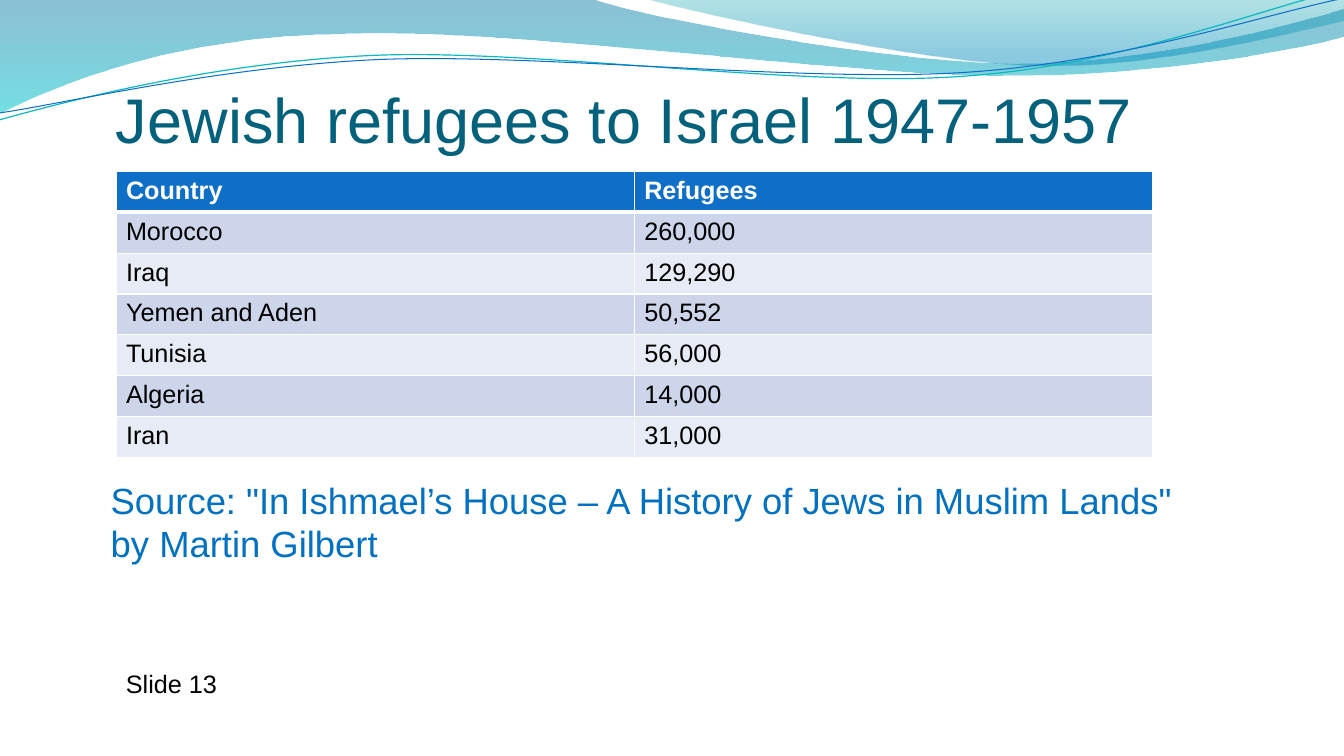
"""Build the slide on refugees to Israel, with its waves, title, table and source."""
import pptx
import pptx.util
import pptx.dml.color
import pptx.enum.text
import pptx.oxml
import pptx.oxml.ns

WIDE, HIGH = 13.33, 7.5
LEFT = 1.15
FONT = "Arial"
WHITE, BLACK, BLUE = "FFFFFF", "000000", "0F6FC6"
BANDS = ["CCD5EA", "E7EBF5"]

TITLE = "Jewish refugees to Israel 1947-1957"
ROWS = [
    ("Country", "Refugees"),
    ("Morocco", "260,000"),
    ("Iraq", "129,290"),
    ("Yemen and Aden", "50,552"),
    ("Tunisia", "56,000"),
    ("Algeria", "14,000"),
    ("Iran", "31,000"),
]
NOTES = [
    ("Source: \"In Ishmael’s House – A History of Jews in Muslim Lands\" by Martin Gilbert",
     (1, 4.69, 10.87, 0.98), 26, "0070C0"),
    ("Slide 13", (LEFT, 6.58, 1.18, 0.4), 18, BLACK),
]
TITLE_BOX = (LEFT, 0.8, 12, 0.75)
TABLE_BOX = (LEFT, 1.7, 10.28, 2.84)

# Each path: a start, then line ends (2 numbers) or curves (6 numbers), in grid cells.
WAVES = [
    ([(0, 0), (5.87, -0.01), (6.34, 0.17, 8.85, 0.63, 10.11, 0.63),
      (11.38, 0.63, 12.78, 0.26, 13.33, 0.09), (13.35, 0.36),
      (13.11, 0.44, 11.6, 0.76, 9.94, 0.75), (8.29, 0.75, 5.09, 0.28, 3.43, 0.34),
      (1.72, 0.36, 0.61, 0.83, -0.01, 1.13), (0, 0)],
     [(0, "0074A1", 45), (1, "00C6CF", 55)]),
    ([(6.39, -0.01), (6.79, 0.11, 9.09, 0.62, 10.25, 0.65),
      (11.41, 0.69, 12.82, 0.32, 13.33, 0.21), (13.33, 0), (6.39, -0.01)],
     [(0, "00A1A9", 30), (0.8, "008BBF", 45)]),
]
LINES = [
    ([(-0.01, 1.19), (0.64, 1.01, 2.11, 0.62, 3.69, 0.55),
      (5.27, 0.48, 7.9, 0.87, 9.5, 0.76), (11.1, 0.66, 12.52, 0.08, 13.31, -0.1)],
     "0AB8BF", 0.85),
    ([(0, 1.12), (0.63, 1.03, 2.18, 0.66, 3.78, 0.59),
      (5.37, 0.53, 7.96, 0.82, 9.55, 0.72), (11.15, 0.62, 12.55, 0.14, 13.34, -0.02)],
     BLUE, 0.75),
]


def cells(*nums):
    """Turn grid cells into lengths; the grid has one cell to the inch."""
    return [pptx.util.Inches(n) for n in nums]


def paint(part, tint):
    """Give a colour from a hex string."""
    part.rgb = pptx.dml.color.RGBColor.from_string(tint)


def apply(thing, **look):
    """Set attributes from format values."""
    for name, val in look.items():
        setattr(thing, name, val)


def write(frame, text, size, tint, bold=False):
    """Put one styled run into a text frame."""
    para = frame.paragraphs[0]
    para.alignment = pptx.enum.text.PP_ALIGN.LEFT
    run = para.add_run()
    run.text = text
    apply(run.font, name=FONT, size=pptx.util.Pt(size), bold=bold)
    paint(run.font.color, tint)


def draw(shapes, path, close):
    """Add a freeform, then bend its lines into cubic curves."""
    spots = [cells(*part[i:i + 2]) for part in path for i in range(0, len(part), 2)]
    pen = shapes.build_freeform(*spots[0], scale=1.0)
    pen.add_line_segments(spots[1:], close=close)
    shape = pen.convert_to_shape()
    shape.shadow.inherit = False
    legs = iter(list(shape.element.iter(pptx.oxml.ns.qn("a:lnTo"))))
    for part in path[1:]:
        leg = next(legs)
        if len(part) == 6:
            bend = pptx.oxml.parse_xml(f'<a:cubicBezTo {pptx.oxml.ns.nsdecls("a")}/>')
            leg.addprevious(bend)
            for piece in (leg, next(legs), next(legs)):
                bend.append(piece[0])
                piece.getparent().remove(piece)
    return shape


def add_waves(slide):
    """Draw the shaded waves and the thin lines over them."""
    for path, stops in WAVES:
        wave = draw(slide.shapes, path, True)
        wave.line.fill.background()
        wave.fill.gradient()
        wave.fill.gradient_angle = 270
        tags = wave.element.iter(pptx.oxml.ns.qn("a:gs"))
        for stop, tag, (place, tint, share) in zip(wave.fill.gradient_stops, tags, stops):
            stop.position = place
            paint(stop.color, tint)
            tag[0].append(pptx.oxml.parse_xml(
                f'<a:alpha {pptx.oxml.ns.nsdecls("a")} val="{share * 1000}"/>'))
    group = slide.shapes.add_group_shape()
    for path, tint, width in LINES:
        line = draw(group.shapes, path, False)
        line.fill.background()
        paint(line.line.color, tint)
        line.line.width = pptx.util.Pt(width)


def edge(cell, row):
    """Rule a cell in white, thicker below the header."""
    thick = {"L": 1, "R": 1, "T": 3 if row == 1 else 1, "B": 3 if row == 0 else 1}
    props = cell._tc.get_or_add_tcPr()
    for spot, (side, width) in enumerate(thick.items()):
        props.insert(spot, pptx.oxml.parse_xml(
            f'<a:ln{side} {pptx.oxml.ns.nsdecls("a")} w="{width * 12700}"><a:solidFill>'
            f'<a:srgbClr val="{WHITE}"/></a:solidFill></a:ln{side}>'))


def add_grid(slide):
    """Add the table of countries."""
    shape = slide.shapes.add_table(len(ROWS), len(ROWS[0]), *cells(*TABLE_BOX))
    for row, texts in enumerate(ROWS):
        head = row == 0
        for col, text in enumerate(texts):
            cell = shape.table.cell(row, col)
            cell.fill.solid()
            paint(cell.fill.fore_color, BLUE if head else BANDS[(row - 1) % 2])
            write(cell.text_frame, text, 18, WHITE if head else BLACK, head)
            edge(cell, row)


def place(shape, box):
    """Move and size a shape."""
    apply(shape, **dict(zip(("left", "top", "width", "height"), cells(*box))))


def main():
    """Build and save the deck."""
    deck = pptx.Presentation()
    deck.slide_width, deck.slide_height = cells(WIDE, HIGH)
    slide = deck.slides.add_slide(deck.slide_layouts[5])
    title = slide.shapes.title
    add_waves(slide)
    title.element.getparent().append(title.element)
    place(title, TITLE_BOX)
    apply(title.text_frame, margin_left=0, margin_right=0, margin_bottom=0, word_wrap=True,
          margin_top=pptx.util.Inches(0.05),
          auto_size=pptx.enum.text.MSO_AUTO_SIZE.NONE,
          vertical_anchor=pptx.enum.text.MSO_ANCHOR.BOTTOM)
    write(title.text_frame, TITLE, 45, "04617B")
    add_grid(slide)
    for text, box, size, tint in NOTES:
        note = slide.shapes.add_textbox(*cells(*box))
        apply(note.text_frame, word_wrap=True,
              auto_size=pptx.enum.text.MSO_AUTO_SIZE.SHAPE_TO_FIT_TEXT)
        write(note.text_frame, text, size, tint)
    deck.save("out.pptx")


if __name__ == "__main__":
    main()
